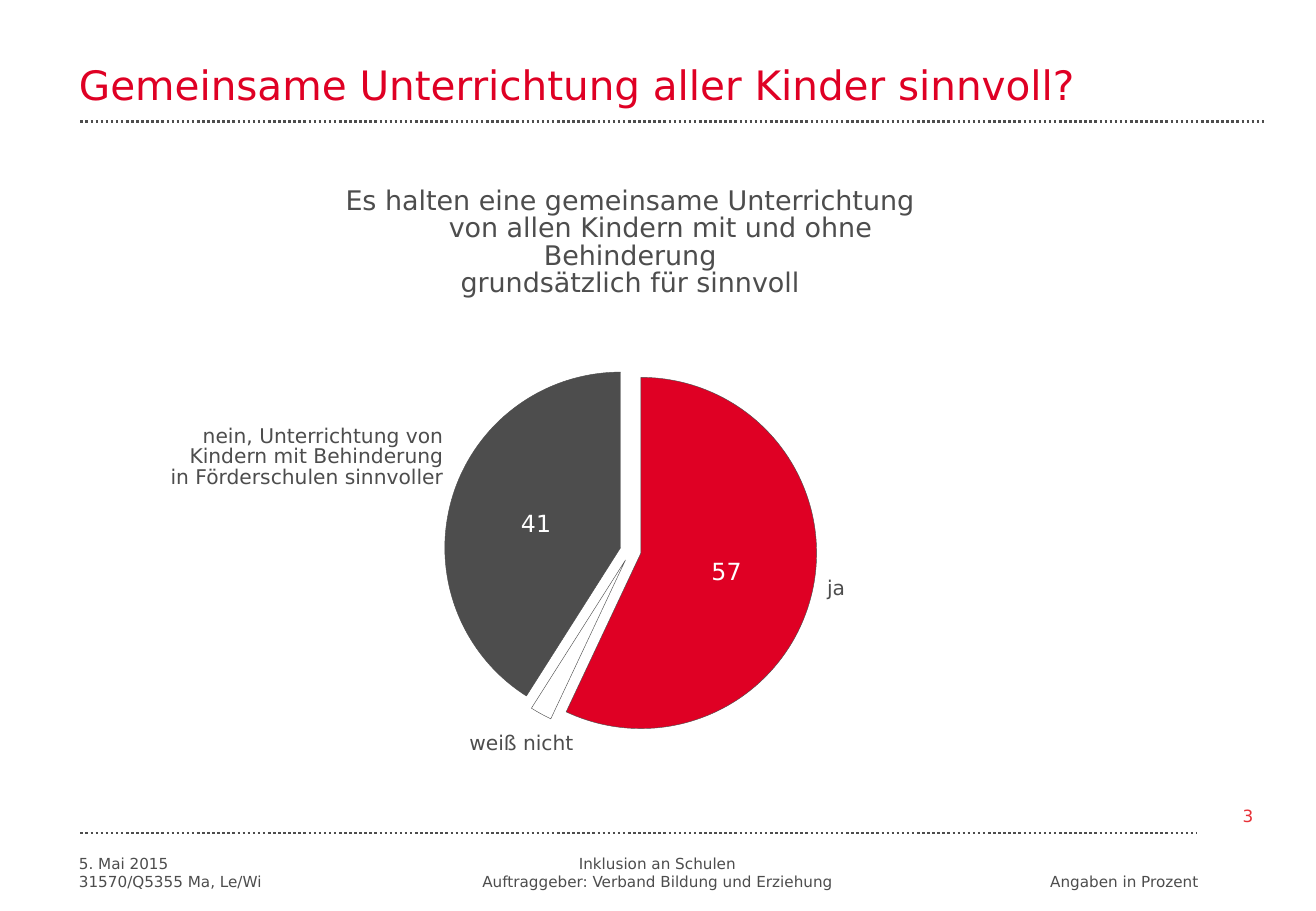
from dataclasses import dataclass
from typing import NamedTuple, Optional

from lxml import etree
from pptx import Presentation
from pptx.chart import data as chart_data
from pptx.dml import color
from pptx.enum import chart as chart_enum
from pptx.enum import dml, text
from pptx.oxml import ns
from pptx.util import Cm, Pt

ALIGN = text.PP_ALIGN
ANCHOR = text.MSO_ANCHOR


@dataclass(frozen=True)
class Theme:
    font: str = "DejaVu Sans"
    red: str = "DF0024"
    number_red: str = "E73137"
    grey: str = "4D4D4D"
    white: str = "FFFFFF"
    title: int = 24
    question: int = 16
    value: int = 14
    label: int = 12
    number: int = 10
    footer: int = 9


THEME = Theme()


class Area(NamedTuple):
    left: float
    top: float
    width: float
    height: float


@dataclass(frozen=True)
class Note:
    area: Area
    lines: tuple[str, ...]
    size: int
    align: ALIGN = ALIGN.LEFT
    color: str = THEME.grey
    spacing: float = 1.0
    wrap: bool = False
    anchor: ANCHOR = ANCHOR.TOP
    inset: tuple[float, float] = (0.25, 0.13)


class Rule(NamedTuple):
    left: float
    right: float
    top: float


class Slice(NamedTuple):
    category: str
    value: int
    fill: Optional[str]


# Content
TITLE = Note(Area(1.4, 1.14, 21.59, 1.27),
             ("Gemeinsame Unterrichtung aller Kinder sinnvoll?",),
             THEME.title, color=THEME.red, anchor=ANCHOR.BOTTOM)
NOTES = (
    Note(Area(6.43, 3.81, 13.49, 2.01),
         ("Es halten eine gemeinsame Unterrichtung",
          "\tvon allen Kindern mit und ohne Behinderung",
          "grundsätzlich für sinnvoll"),
         THEME.question, ALIGN.CENTER, spacing=0.85, wrap=True),
    Note(Area(17.04, 11.91, 0.91, 0.76), ("ja",), THEME.label),
    Note(Area(3.25, 8.79, 6.27, 1.57),
         ("nein, Unterrichtung von", "Kindern mit Behinderung",
          "in Förderschulen sinnvoller"),
         THEME.label, ALIGN.RIGHT, spacing=0.85),
    Note(Area(9.55, 15.14, 2.69, 0.76), ("weiß nicht",), THEME.label, ALIGN.RIGHT),
    Note(Area(1.4, 17.73, 4.47, 1.02),
         ("5. Mai 2015", "31570/Q5355 Ma, Le/Wi"), THEME.footer),
    Note(Area(9.75, 17.73, 7.98, 1.02),
         ("Inklusion an Schulen", "Auftraggeber: Verband Bildung und Erziehung"),
         THEME.footer, ALIGN.CENTER),
    Note(Area(21.67, 18.11, 3.66, 0.64), ("Angaben in Prozent",),
         THEME.footer, ALIGN.CENTER),
    Note(Area(25.53, 16.56, 1.12, 0.99), ("3",), THEME.number, ALIGN.CENTER,
         THEME.number_red, anchor=ANCHOR.MIDDLE, inset=(0, 0)),
)
RULES = (Rule(1.68, 26.44, 2.54), Rule(1.68, 25.02, 17.42))
SLICES = (Slice("1", 57, THEME.red), Slice("2", 2, None), Slice("3", 41, THEME.grey))
CHART_AREA = Area(7.52, 6.76, 10.8, 10.06)
PLOT_AREA = {"x": 0.164, "y": 0.081, "w": 0.721, "h": 0.784}
EXPLOSION = 6


def rgb(value: str) -> color.RGBColor:
    return color.RGBColor.from_string(value)


def apply(target, formats: dict) -> None:
    for name, value in formats.items():
        setattr(target, name, value)


def lengths(area: Area) -> list:
    return [Cm(value) for value in area]


def style_font(font, size: int, hue: str) -> None:
    apply(font, {"name": THEME.font, "size": Pt(size), "bold": False})
    font.color.rgb = rgb(hue)


def write_note(box, note: Note) -> None:
    across, down = (Cm(value) for value in note.inset)
    frame = box.text_frame
    apply(frame, {"word_wrap": note.wrap, "auto_size": text.MSO_AUTO_SIZE.NONE,
                  "vertical_anchor": note.anchor,
                  "margin_left": across, "margin_right": across,
                  "margin_top": down, "margin_bottom": down})
    for index, line in enumerate(note.lines):
        para = frame.add_paragraph() if index else frame.paragraphs[0]
        apply(para, {"alignment": note.align, "line_spacing": note.spacing})
        span = para.add_run()
        span.text = line
        style_font(span.font, note.size, note.color)


def draw_rule(page, rule: Rule) -> None:
    line = page.shapes.add_connector(1, Cm(rule.left), Cm(rule.top),
                                     Cm(rule.right), Cm(rule.top))
    apply(line.line, {"width": Pt(1.5), "dash_style": dml.MSO_LINE.ROUND_DOT})
    line.line.color.rgb = rgb(THEME.grey)
    etree.SubElement(line.element.spPr, ns.qn("a:effectLst"))


def outline(line) -> None:
    line.color.rgb = rgb(THEME.grey)
    line.width = Pt(0.25)


def place_plot(chart) -> None:
    plot_area = chart.element.find(".//" + ns.qn("c:plotArea"))
    for old in plot_area.findall(ns.qn("c:layout")):
        plot_area.remove(old)
    layout = etree.Element(ns.qn("c:layout"))
    manual = etree.SubElement(layout, ns.qn("c:manualLayout"))
    settings = {"layoutTarget": "inner", "xMode": "edge", "yMode": "edge", **PLOT_AREA}
    for name, value in settings.items():
        etree.SubElement(manual, ns.qn(f"c:{name}")).set("val", str(value))
    plot_area.insert(0, layout)


def draw_pie(page) -> None:
    values = chart_data.CategoryChartData()
    values.categories = [part.category for part in SLICES]
    values.add_series("Series 1", [part.value for part in SLICES])
    chart = page.shapes.add_chart(chart_enum.XL_CHART_TYPE.PIE,
                                  *lengths(CHART_AREA), values).chart
    apply(chart, {"has_legend": False, "has_title": False})
    style_font(chart.font, THEME.value, THEME.grey)
    pie = chart.plots[0]
    pie.vary_by_categories = True
    series = pie.series[0]
    outline(series.format.line)
    series.data_labels.show_value = False

    # Slices, with values on the filled ones
    for index, part in enumerate(SLICES):
        point = series.points[index]
        outline(point.format.line)
        if part.fill is None:
            point.format.fill.background()
            continue
        point.format.fill.solid()
        point.format.fill.fore_color.rgb = rgb(part.fill)
        style_font(point.data_label.font, THEME.value, THEME.white)
        point.data_label.position = chart_enum.XL_LABEL_POSITION.CENTER

    # Gap between slices
    explosion = etree.Element(ns.qn("c:explosion"), val=str(EXPLOSION))
    chart.element.find(".//" + ns.qn("c:ser")).find(ns.qn("c:spPr")).addnext(explosion)
    place_plot(chart)


def main() -> None:
    deck = Presentation()
    apply(deck, {"slide_width": Cm(27.51), "slide_height": Cm(19.05)})
    page = deck.slides.add_slide(deck.slide_layouts[5])

    # Title
    title = page.shapes.title
    apply(title, dict(zip(("left", "top", "width", "height"), lengths(TITLE.area))))
    write_note(title, TITLE)

    # Rules, pie and texts
    for rule in RULES:
        draw_rule(page, rule)
    draw_pie(page)
    for note in NOTES:
        write_note(page.shapes.add_textbox(*lengths(note.area)), note)
    deck.save("out.pptx")


if __name__ == "__main__":
    main()
